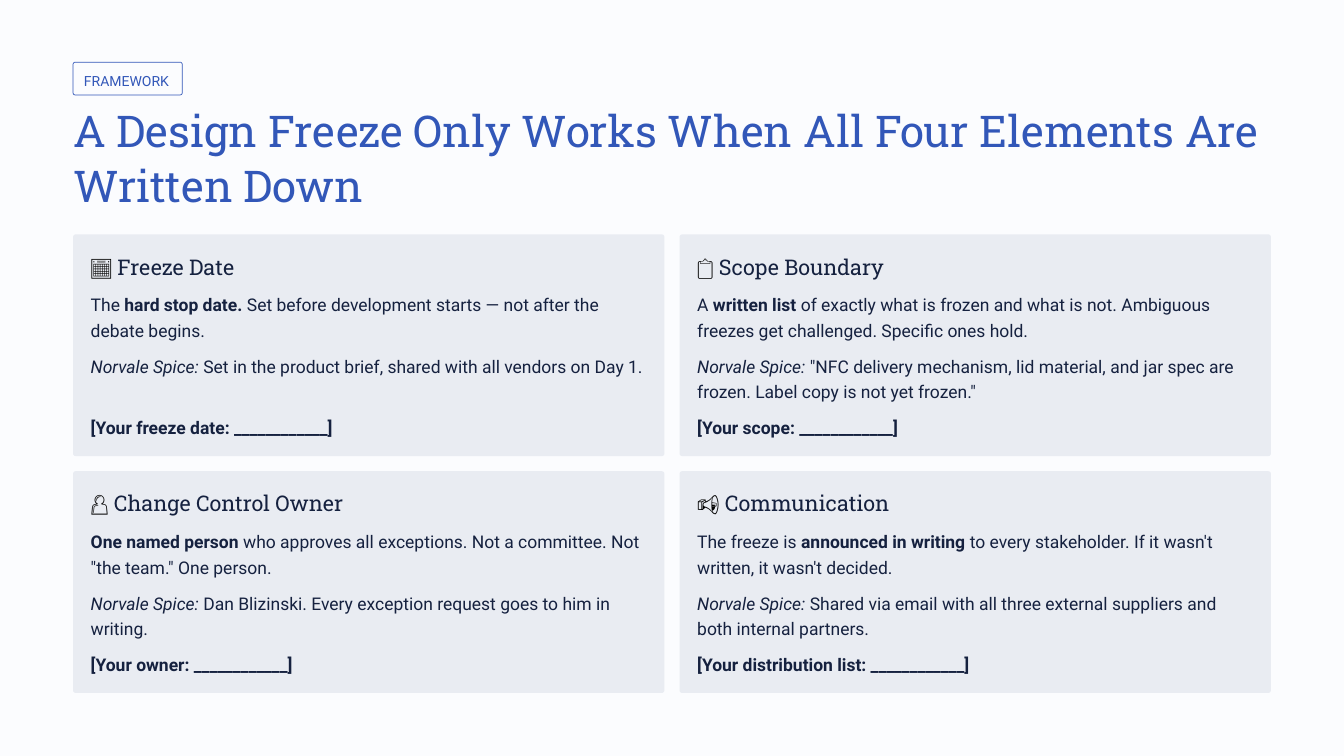
from dataclasses import dataclass

from pptx import Presentation
from pptx.dml.color import RGBColor
from pptx.enum.shapes import MSO_SHAPE
from pptx.enum.text import MSO_ANCHOR, MSO_AUTO_SIZE, PP_ALIGN
from pptx.shapes.autoshape import Shape
from pptx.slide import Slide
from pptx.util import Inches, Pt

COLORS = {
    "page": "FBFCFE",
    "blue": "3257B8",
    "card": "E9ECF2",
    "ink": "15213F",
    "icon": "000000",
}
SANS, SLAB = "Roboto", "Roboto Slab"
LEFT, TOP = 0.87, 2.79
CARD_W, CARD_H = 7.04, 2.64
STEP_X, STEP_Y = 7.22, 2.82
PAD = 0.21
TEXT_W = CARD_W - 2 * PAD


@dataclass
class Run:
    text: str
    color: str = "ink"
    bold: bool = False
    italic: bool = False


@dataclass
class Style:
    font: str
    size: float
    line: float


@dataclass
class Card:
    icon: str
    name: str
    rule: list[Run]
    case: str
    blank: str


TAG = Style(SANS, 12, 17.5)
TITLE = Style(SLAB, 37.5, 47)
HEAD = Style(SLAB, 18.5, 23.5)
BODY = Style(SANS, 15, 22)

CARDS = [
    Card("📅", "Freeze Date",
         [Run("The "), Run("hard stop date.", bold=True),
          Run(" Set before development starts — not after the debate begins.")],
         "Set in the product brief, shared with all vendors on Day 1.",
         "freeze date"),
    Card("📋", "Scope Boundary",
         [Run("A "), Run("written list", bold=True),
          Run(" of exactly what is frozen and what is not. "
              "Ambiguous freezes get challenged. Specific ones hold.")],
         '"NFC delivery mechanism, lid material, and jar spec are frozen. '
         'Label copy is not yet frozen."',
         "scope"),
    Card("👤", "Change Control Owner",
         [Run("One named person", bold=True),
          Run(" who approves all exceptions. Not a committee. "
              'Not "the team." One person.')],
         "Dan Blizinski. Every exception request goes to him in writing.",
         "owner"),
    Card("📢", "Communication",
         [Run("The freeze is "), Run("announced in writing", bold=True),
          Run(" to every stakeholder. If it wasn't written, it wasn't decided.")],
         "Shared via email with all three external suppliers "
         "and both internal partners.",
         "distribution list"),
]


def rgb(name: str) -> RGBColor:
    return RGBColor.from_string(COLORS[name])


def write(shape: Shape, runs: list[Run], style: Style) -> None:
    frame = shape.text_frame
    frame.word_wrap = True
    frame.auto_size = MSO_AUTO_SIZE.NONE
    frame.vertical_anchor = MSO_ANCHOR.TOP
    frame.margin_left = frame.margin_right = 0
    frame.margin_top = frame.margin_bottom = 0
    para = frame.paragraphs[0]
    para.alignment = PP_ALIGN.LEFT
    para.line_spacing = Pt(style.line)
    para.space_before = Pt(0)
    for item in runs:
        run = para.add_run()
        run.text = item.text
        font = run.font
        font.name, font.size = style.font, Pt(style.size)
        font.bold, font.italic = item.bold, item.italic
        font.color.rgb = rgb(item.color)


def label(slide: Slide, x: float, y: float, w: float, h: float,
          runs: list[Run], style: Style) -> None:
    box = slide.shapes.add_textbox(Inches(x), Inches(y), Inches(w), Inches(h))
    write(box, runs, style)


def panel(slide: Slide, x: float, y: float, w: float, h: float,
          curve: float) -> Shape:
    """Add a rounded box with neither fill nor line."""
    shape = slide.shapes.add_shape(
        MSO_SHAPE.ROUNDED_RECTANGLE,
        Inches(x), Inches(y), Inches(w), Inches(h))
    shape.adjustments[0] = curve
    shape.shadow.inherit = False
    shape.fill.background()
    shape.line.fill.background()
    return shape


def draw_card(slide: Slide, card: Card, x: float, y: float) -> None:
    shape = panel(slide, x, y, CARD_W, CARD_H, 0.012)
    shape.fill.solid()
    shape.fill.fore_color.rgb = rgb("card")
    rows = [
        (0.21, 0.34, HEAD, [Run(card.icon, "icon"), Run(f" {card.name}")]),
        (0.66, 0.62, BODY, card.rule),
        (1.39, 0.62, BODY,
         [Run("Norvale Spice:", italic=True), Run(f" {card.case}")]),
        (2.12, 0.31, BODY,
         [Run(f"[Your {card.blank}: {'_' * 12}]", bold=True)]),
    ]
    for drop, high, style, runs in rows:
        label(slide, x + PAD, y + drop, TEXT_W, high, runs, style)


def main() -> None:
    deck = Presentation()
    deck.slide_width, deck.slide_height = Inches(16), Inches(9)
    slide = deck.slides.add_slide(deck.slide_layouts[5])
    slide.background.fill.solid()
    slide.background.fill.fore_color.rgb = rgb("page")

    tag = panel(slide, LEFT, 0.74, 1.3, 0.39, 0.064)
    tag.line.color.rgb = rgb("blue")
    tag.line.width = Pt(0.6)
    label(slide, 1, 0.82, 1.03, 0.25, [Run("FRAMEWORK", "blue")], TAG)

    title = slide.shapes.title
    title.left, title.top = Inches(LEFT), Inches(1.21)
    title.width, title.height = Inches(14.26), Inches(1.32)
    write(title, [Run("A Design Freeze Only Works When All Four Elements "
                      "Are Written Down", "blue")], TITLE)

    for i, card in enumerate(CARDS):
        row, col = divmod(i, 2)
        draw_card(slide, card, LEFT + col * STEP_X, TOP + row * STEP_Y)

    deck.save("out.pptx")


if __name__ == "__main__":
    main()
